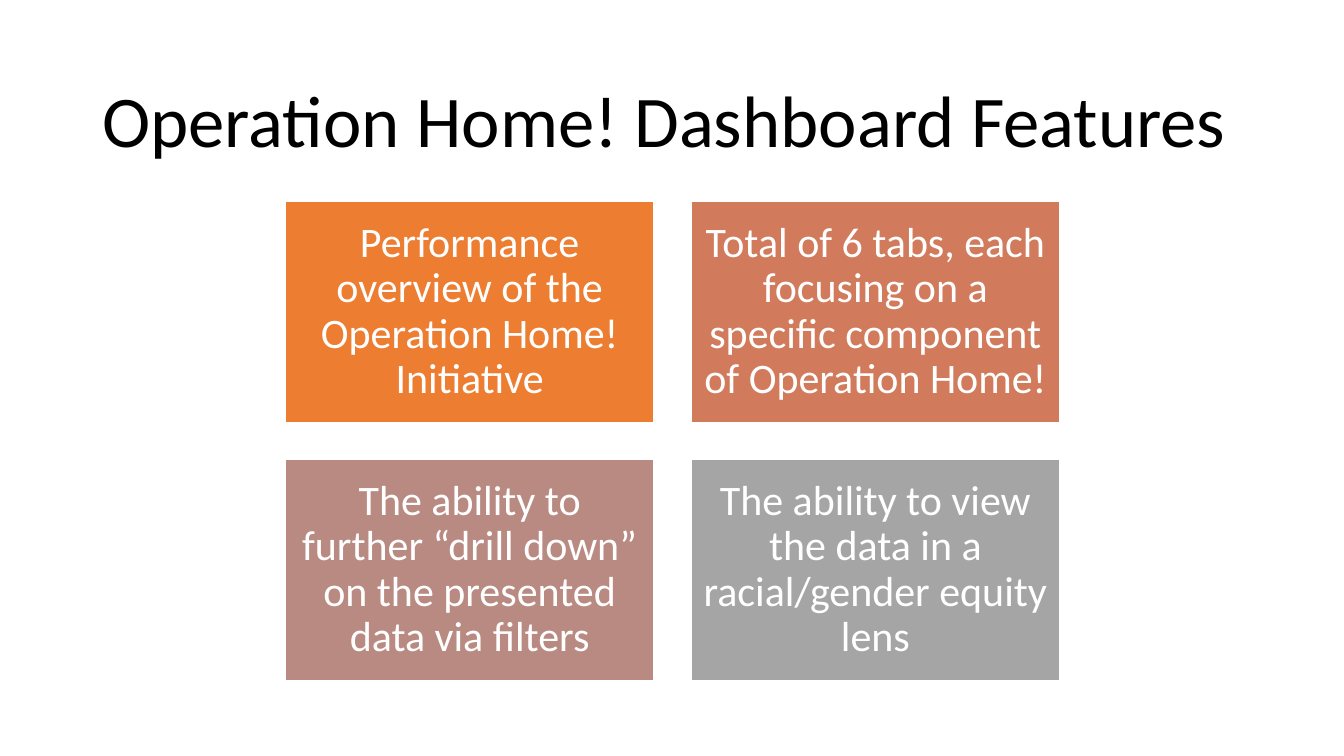
from pptx import Presentation
from pptx.dml.color import RGBColor
from pptx.enum.shapes import MSO_SHAPE as Preset
from pptx.enum.text import MSO_ANCHOR as Anchor, PP_ALIGN as Align
from pptx.util import Cm, Pt

FEATURES = [
    ("Performance overview of the Operation Home! Initiative", "ED7D31"),
    ("Total of 6 tabs, each focusing on a specific component of Operation Home!", "D17B5C"),
    ("The ability to further “drill down” on the presented data via filters", "B98A82"),
    ("The ability to view the data in a racial/gender equity lens", "A5A5A5"),
]


def color(hex_value):
    return RGBColor.from_string(hex_value)


def write(frame, text, size, hex_value, align):
    frame.word_wrap = True
    frame.vertical_anchor = Anchor.MIDDLE
    paragraph = frame.paragraphs[0]
    paragraph.text = text
    paragraph.alignment = align
    paragraph.line_spacing = 0.9
    paragraph.font.name = "Calibri"
    paragraph.font.size = Pt(size)
    paragraph.font.color.rgb = color(hex_value)


def add_title(slide, text, left, top, width, height):
    title = slide.shapes.add_textbox(Cm(left), Cm(top), Cm(width), Cm(height))
    write(title.text_frame, text, 52, "000000", Align.LEFT)


def add_card(slide, text, fill, left, top, width, height):
    card = slide.shapes.add_shape(Preset.RECTANGLE, Cm(left), Cm(top), Cm(width), Cm(height))
    card.shadow.inherit = False
    card.fill.solid()
    card.fill.fore_color.rgb = color(fill)
    card.line.color.rgb = color("FFFFFF")
    card.line.width = Pt(1)
    frame = card.text_frame
    frame.margin_left = frame.margin_right = Cm(0.3)
    frame.margin_top = frame.margin_bottom = Cm(0.3)
    write(frame, text, 30, "FFFFFF", Align.CENTER)


def add_feature_grid(slide, features, left, top, width, height, columns=2, gap=0.93):
    rows = -(-len(features) // columns)
    card_width = (width - gap * (columns - 1)) / columns
    card_height = (height - gap * (rows - 1)) / rows
    for index, (text, fill) in enumerate(features):
        row, column = divmod(index, columns)
        add_card(slide, text, fill,
                 left + column * (card_width + gap),
                 top + row * (card_height + gap),
                 card_width, card_height)


def main():
    deck = Presentation()
    deck.slide_width, deck.slide_height = Cm(33.87), Cm(19.05)
    slide = deck.slides.add_slide(deck.slide_layouts[6])
    add_title(slide, "Operation Home! Dashboard Features", 2.33, 1.55, 29.21, 3.15)
    add_feature_grid(slide, FEATURES, 7.19, 5.08, 19.52, 12.07)
    deck.save("out.pptx")


if __name__ == "__main__":
    main()
